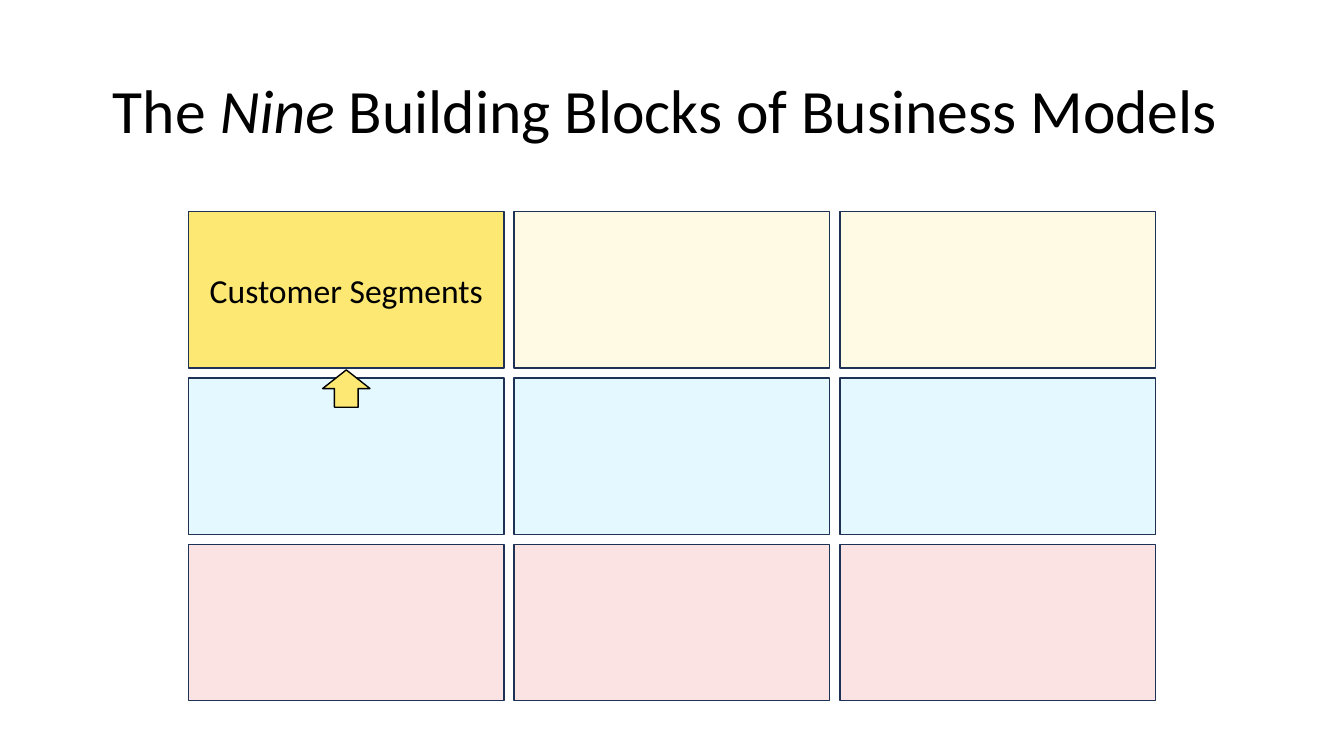
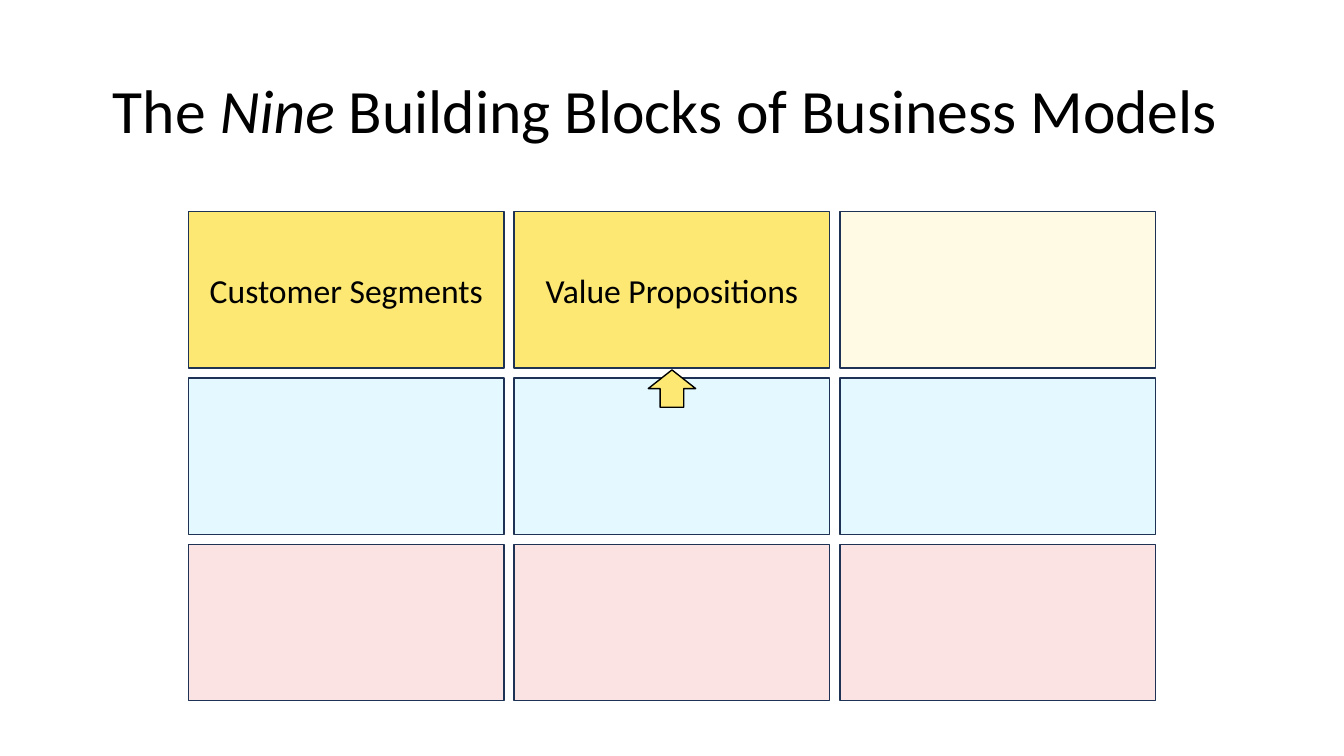
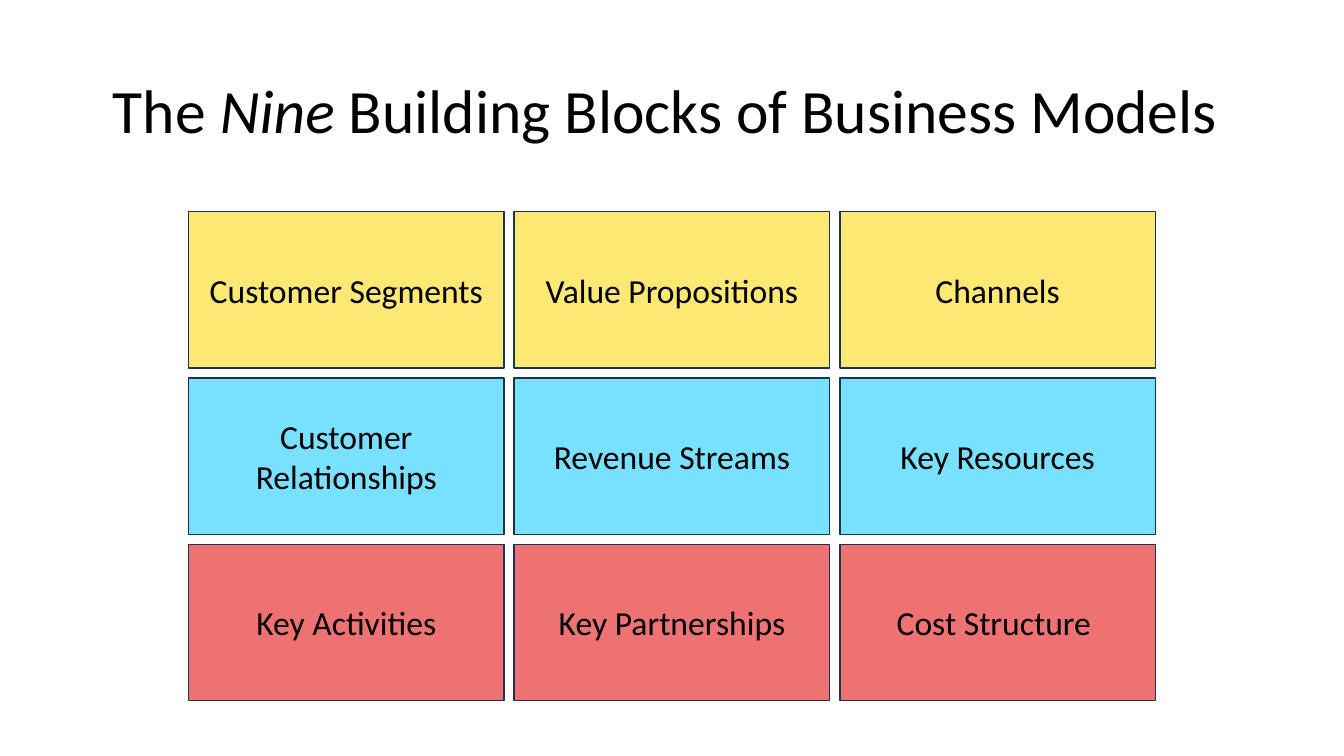
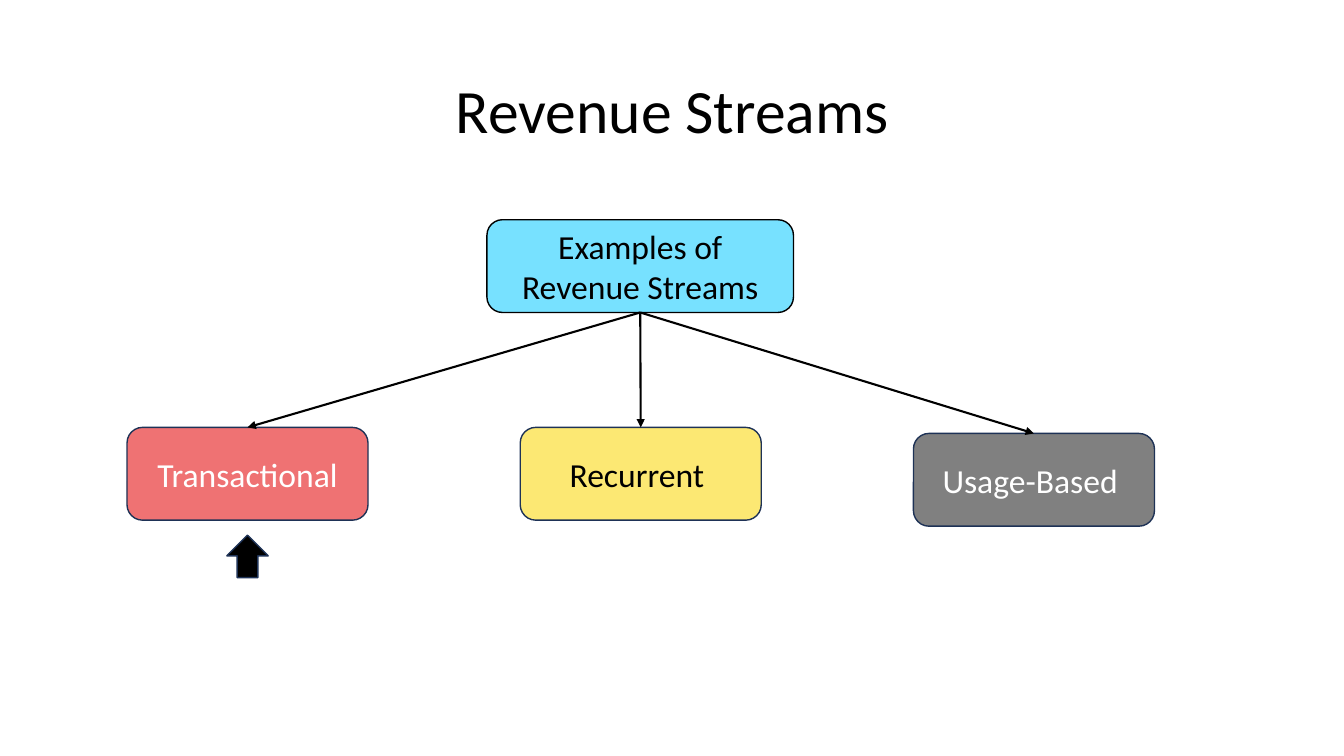
from pptx import Presentation
from pptx.dml.color import RGBColor
from pptx.enum.shapes import MSO_CONNECTOR, MSO_SHAPE
from pptx.enum.text import MSO_ANCHOR, PP_ALIGN
from pptx.oxml.ns import qn
from pptx.util import Inches, Pt
from lxml.etree import SubElement

# Shared style
FONT = "Calibri"
BLACK = RGBColor(0x00, 0x00, 0x00)
WHITE = RGBColor(0xFF, 0xFF, 0xFF)
YELLOW = RGBColor(0xFC, 0xE8, 0x73)
BLUE = RGBColor(0x77, 0xE1, 0xFF)
RED = RGBColor(0xEF, 0x72, 0x73)
GRAY = RGBColor(0x80, 0x80, 0x80)
NAVY = RGBColor(0x1E, 0x32, 0x56)
FADED_OPACITY = 20

# Content: title runs are (text, italic)
BLOCKS_TITLE = [("The ", False), ("Nine", True),
                (" Building Blocks of Business Models ", False)]
STREAMS_TITLE = [("Revenue Streams", False)]
BLOCK_ROWS = [
    (YELLOW, ["Customer Segments", "Value Propositions", "Channels"]),
    (BLUE, ["Customer Relationships", "Revenue Streams", "Key Resources"]),
    (RED, ["Key Activities", "Key Partnerships", "Cost Structure "]),
]
# Blocks revealed so far, and the column the arrow points at
BLOCK_STEPS = [(1, 0), (2, 1), (9, None)]
# Text, fill, text colour, top
STREAMS = [
    ("Transactional", RED, WHITE, 4.24),
    ("Recurrent ", YELLOW, BLACK, 4.24),
    ("Usage-Based ", GRAY, WHITE, 4.3),
]

# Block grid and stream row, in inches
GRID_LEFT, GRID_TOP = 1.87, 2.1
BLOCK_WIDTH, BLOCK_HEIGHT = 3.13, 1.55
COLUMN_STEP, ROW_STEP = 3.23, 1.65
POINTER_WIDTH, POINTER_HEIGHT = 0.47, 0.37
STREAM_LEFT, STREAM_STEP = 1.26, 3.9
STREAM_WIDTH, STREAM_HEIGHT = 2.39, 0.92


def add_titled_slide(presentation, title_runs):
    slide = presentation.slides.add_slide(presentation.slide_layouts[5])
    paragraph = slide.shapes.title.text_frame.paragraphs[0]
    paragraph.alignment = PP_ALIGN.CENTER
    paragraph.line_spacing = 0.9
    for text, italic in title_runs:
        run = paragraph.add_run()
        run.text = text
        run.font.name, run.font.size = FONT, Pt(44)
        run.font.italic = italic
        run.font.color.rgb = BLACK
    return slide


def add_box(slide, kind, box, fill, text="", color=BLACK, outline=NAVY, opacity=100):
    shape = slide.shapes.add_shape(kind, *map(Inches, box))
    shape.shadow.inherit = False
    shape.fill.solid()
    shape.fill.fore_color.rgb = fill
    if opacity < 100:
        fill_color = shape.fill._xPr.find(qn("a:solidFill"))[0]
        SubElement(fill_color, qn("a:alpha")).set("val", str(opacity * 1000))
    shape.line.color.rgb = outline
    shape.line.width = Pt(1)
    if text:
        frame = shape.text_frame
        frame.text = text
        frame.word_wrap = True
        frame.vertical_anchor = MSO_ANCHOR.MIDDLE
        paragraph = frame.paragraphs[0]
        paragraph.alignment = PP_ALIGN.CENTER
        font = paragraph.runs[0].font
        font.name, font.size = FONT, Pt(24)
        font.color.rgb = color
    return shape


def add_arrow(slide, parent, child):
    """Join the bottom of the parent to the top of the child."""
    connector = slide.shapes.add_connector(MSO_CONNECTOR.STRAIGHT, 0, 0, 0, 0)
    connector.begin_connect(parent, 2)
    connector.end_connect(child, 0)
    connector.line.color.rgb = BLACK
    connector.line.width = Pt(1.5)
    SubElement(connector.line._get_or_add_ln(), qn("a:tailEnd")).set("type", "triangle")
    SubElement(connector._element.spPr, qn("a:effectLst"))


def add_blocks_slide(presentation, revealed, pointed_column):
    slide = add_titled_slide(presentation, BLOCKS_TITLE)
    for row, (fill, names) in enumerate(BLOCK_ROWS):
        for column, name in enumerate(names):
            shown = row * len(names) + column < revealed
            box = (GRID_LEFT + column * COLUMN_STEP, GRID_TOP + row * ROW_STEP,
                   BLOCK_WIDTH, BLOCK_HEIGHT)
            # Blocks still to come are faded and carry no text
            add_box(slide, MSO_SHAPE.RECTANGLE, box, fill, name if shown else "",
                    opacity=100 if shown else FADED_OPACITY)
    if pointed_column is not None:
        left = GRID_LEFT + pointed_column * COLUMN_STEP + (BLOCK_WIDTH - POINTER_WIDTH) / 2
        add_box(slide, MSO_SHAPE.UP_ARROW, (left, 3.67, POINTER_WIDTH, POINTER_HEIGHT),
                YELLOW, outline=BLACK)


def add_streams_slide(presentation):
    slide = add_titled_slide(presentation, STREAMS_TITLE)
    parent = add_box(slide, MSO_SHAPE.ROUNDED_RECTANGLE, (4.83, 2.18, 3.04, STREAM_HEIGHT),
                     BLUE, "Examples of Revenue Streams", outline=BLACK)
    children = [
        add_box(slide, MSO_SHAPE.ROUNDED_RECTANGLE,
                (STREAM_LEFT + index * STREAM_STEP, top, STREAM_WIDTH, STREAM_HEIGHT),
                fill, text, color)
        for index, (text, fill, color, top) in enumerate(STREAMS)
    ]
    for child in children:
        add_arrow(slide, parent, child)
    # Pointer below the first stream
    add_box(slide, MSO_SHAPE.UP_ARROW, (2.25, 5.31, 0.41, 0.42), BLACK)


def main():
    presentation = Presentation()
    presentation.slide_width, presentation.slide_height = Inches(13.33), Inches(7.5)
    # Every slide inherits its title place from the layout
    title = presentation.slide_layouts[5].placeholders[0]
    title.left, title.top = Inches(0.92), Inches(0.4)
    title.width, title.height = Inches(11.5), Inches(1.45)
    title.text_frame.vertical_anchor = MSO_ANCHOR.MIDDLE

    for revealed, pointed_column in BLOCK_STEPS:
        add_blocks_slide(presentation, revealed, pointed_column)
    add_streams_slide(presentation)
    presentation.save("out.pptx")


if __name__ == "__main__":
    main()
